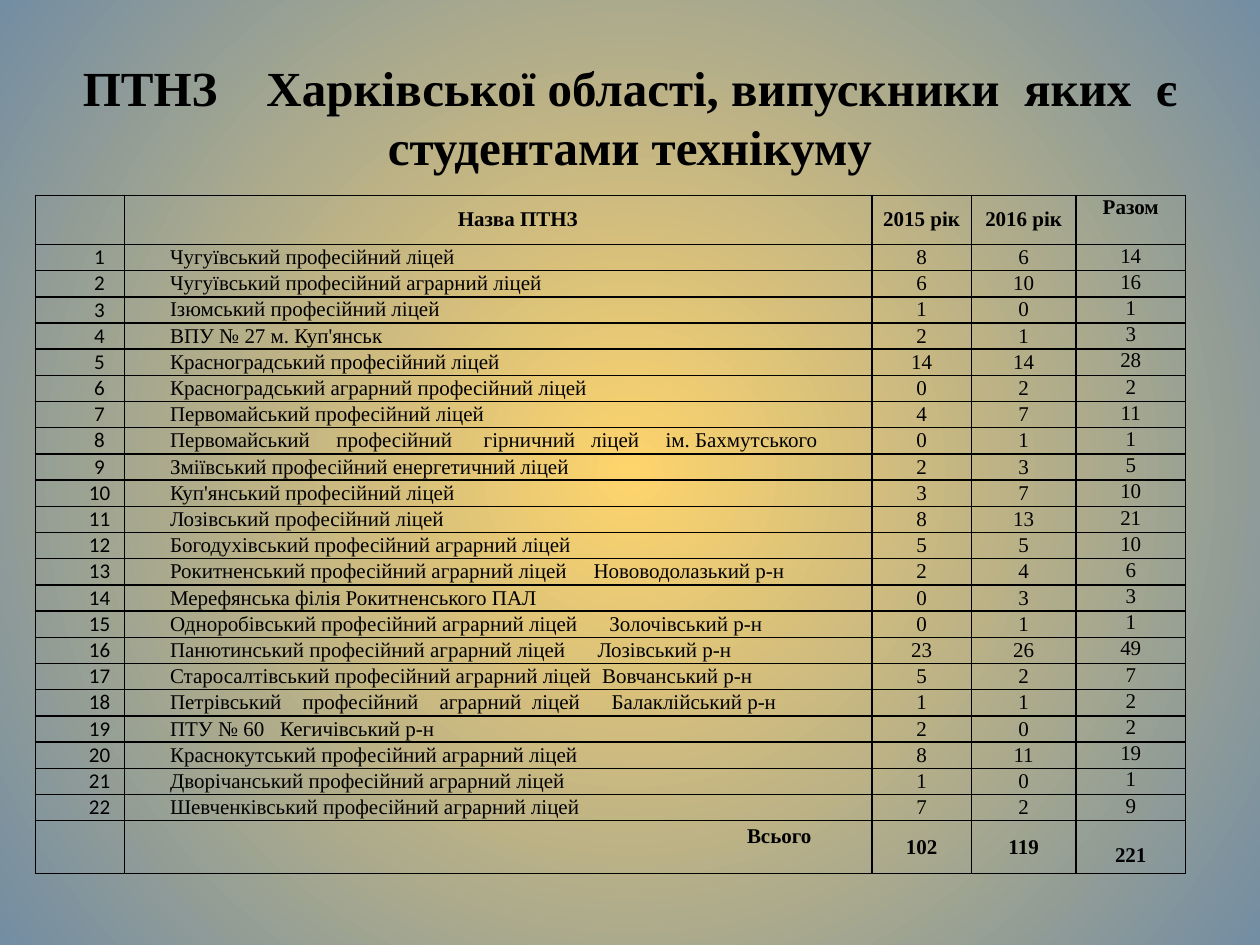
"""Build a slide with a table of vocational schools and their graduates."""
from dataclasses import dataclass, field
from typing import Any

from lxml.etree import SubElement
from pptx import Presentation
from pptx.dml.color import RGBColor
from pptx.enum.text import MSO_ANCHOR, PP_ALIGN
from pptx.oxml import parse_xml
from pptx.oxml.ns import nsdecls, qn
from pptx.util import Inches, Pt

SLIDE_WIDTH, SLIDE_HEIGHT = Inches(10), Inches(7.5)
INK, GLOW, EDGE = "000000", "FED46C", "738DA3"
SERIF, SANS = "Times New Roman", "Calibri"
COLUMN_WIDTHS = (0.71, 5.93, 0.79, 0.83, 0.87)
HEADER_HEIGHT, SCHOOL_HEIGHT, TOTAL_HEIGHT = 0.39, 0.208, 0.42
NAME_INDENT, COUNT_INDENT = Inches(0.31), Inches(-0.03)
SPACE_SHARE = 0.25


@dataclass(frozen=True)
class School:
    """A school; bars in its name mark gaps, given as numbers of space widths."""
    name: str
    year_2015: int
    year_2016: int
    gaps: tuple[int, ...] = ()

    @property
    def total(self) -> int:
        """Return the graduates of both years."""
        return self.year_2015 + self.year_2016


@dataclass(frozen=True)
class Entry:
    """Text with its gaps and its look."""
    text: str
    gaps: tuple[int, ...] = ()
    font: str = SERIF
    size: int = 12
    bold: bool = False
    indent: int = COUNT_INDENT
    align: PP_ALIGN = PP_ALIGN.CENTER
    frame: dict[str, Any] = field(default_factory=dict)


SCHOOLS = (
    School("Чугуївський професійний ліцей", 8, 6),
    School("Чугуївський професійний аграрний ліцей", 6, 10),
    School("Ізюмський професійний ліцей", 1, 0),
    School("ВПУ № 27 м. Куп'янськ", 2, 1),
    School("Красноградський професійний ліцей", 14, 14),
    School("Красноградський аграрний професійний ліцей", 0, 2),
    School("Первомайський професійний ліцей", 4, 7),
    School("Первомайський|професійний|гірничний|ліцей|ім. Бахмутського", 0, 1, (5, 6, 3, 5)),
    School("Зміївський професійний енергетичний ліцей", 2, 3),
    School("Куп'янський професійний ліцей", 3, 7),
    School("Лозівський професійний ліцей", 8, 13),
    School("Богодухівський професійний аграрний ліцей", 5, 5),
    School("Рокитненський професійний аграрний ліцей|Нововодолазький р-н", 2, 4, (5,)),
    School("Мерефянська філія Рокитненського ПАЛ", 0, 3),
    School("Одноробівський професійний аграрний ліцей|Золочівський р-н", 0, 1, (6,)),
    School("Панютинський професійний аграрний ліцей|Лозівський р-н", 23, 26, (6,)),
    School("Старосалтівський професійний аграрний ліцей|Вовчанський р-н", 5, 2, (2,)),
    School("Петрівський|професійний|аграрний|ліцей|Балаклійський р-н", 1, 1, (4, 4, 2, 6)),
    School("ПТУ № 60|Кегичівський р-н", 2, 0, (3,)),
    School("Краснокутський професійний аграрний ліцей", 8, 11),
    School("Дворічанський професійний аграрний ліцей", 1, 0),
    School("Шевченківський професійний аграрний ліцей", 7, 2),
)


def color(value: str) -> RGBColor:
    """Turn a hex string into a colour."""
    return RGBColor.from_string(value)


def apply(target: Any, formats: dict[str, Any]) -> None:
    """Set each format value on the target."""
    for attribute, value in formats.items():
        setattr(target, attribute, value)


def add_words(paragraph: Any, words: str, entry: Entry, tracking: float = 0) -> None:
    """Add a run in the look of the entry, with tracking in points."""
    run = paragraph.add_run()
    run.text = words
    apply(run.font, {"name": entry.font, "size": Pt(entry.size), "bold": entry.bold})
    run.font.color.rgb = color(INK)
    if tracking:
        run.font._element.set("spc", str(round(tracking * 100)))


def write(paragraph: Any, entry: Entry) -> None:
    """Write an entry, widening a single space for each gap."""
    paragraph.alignment = entry.align
    apply_indent = paragraph._p.get_or_add_pPr().set
    apply_indent("marL", "0")
    apply_indent("indent", str(entry.indent))
    parts = entry.text.split("|")
    add_words(paragraph, parts[0], entry)
    for part, gap in zip(parts[1:], entry.gaps, strict=True):
        add_words(paragraph, " ", entry, (gap - 1) * SPACE_SHARE * entry.size)
        add_words(paragraph, part, entry)


def add_borders(cell: Any) -> None:
    """Draw a thin line on all four sides of a cell."""
    properties = cell._tc.get_or_add_tcPr()
    for position, side in enumerate(("lnL", "lnR", "lnT", "lnB")):
        border = parse_xml(f'<a:{side} {nsdecls("a")} w="{Pt(1)}"/>')
        fill = SubElement(border, qn("a:solidFill"))
        SubElement(fill, qn("a:srgbClr"), val=INK)
        properties.insert(position, border)


def fill_cell(cell: Any, entry: Entry) -> None:
    """Format a cell and write its entry."""
    apply(cell, {
        "margin_left": Inches(0.05), "margin_right": Inches(0.05),
        "margin_top": 0, "margin_bottom": 0,
        "vertical_anchor": MSO_ANCHOR.MIDDLE,
    } | entry.frame)
    cell.fill.background()
    add_borders(cell)
    if entry.text:
        write(cell.text_frame.paragraphs[0], entry)


def school_row(number: int, school: School) -> list[Entry]:
    """Return the entries of one school."""
    return [
        Entry(str(number), font=SANS, indent=NAME_INDENT),
        Entry(school.name, school.gaps, indent=NAME_INDENT, align=PP_ALIGN.LEFT),
        Entry(str(school.year_2015)),
        Entry(str(school.year_2016)),
        Entry(str(school.total), frame={"vertical_anchor": MSO_ANCHOR.TOP}),
    ]


def table_rows() -> list[list[Entry]]:
    """Return the header, the schools and the totals."""
    top = {"vertical_anchor": MSO_ANCHOR.TOP}
    header = [
        Entry(""),
        Entry("Назва ПТНЗ", bold=True, indent=NAME_INDENT),
        Entry("2015 рік", bold=True),
        Entry("2016 рік", bold=True),
        Entry("Разом", bold=True, frame=top),
    ]
    totals = [
        Entry(""),
        Entry("Всього", bold=True, indent=0, align=PP_ALIGN.RIGHT,
              frame=top | {"margin_right": Inches(0.48), "margin_top": Inches(0.03)}),
        Entry(str(sum(school.year_2015 for school in SCHOOLS)), bold=True),
        Entry(str(sum(school.year_2016 for school in SCHOOLS)), bold=True),
        Entry(str(sum(school.total for school in SCHOOLS)), bold=True,
              frame=top | {"margin_top": Inches(0.18)}),
    ]
    return [header, *(school_row(*pair) for pair in enumerate(SCHOOLS, 1)), totals]


def add_background(slide: Any) -> None:
    """Fill the slide with a glow from its centre."""
    fill = slide.background.fill
    fill.gradient()
    for stop, position, shade in zip(fill.gradient_stops, (0, 1), (GLOW, EDGE)):
        stop.position = position
        stop.color.rgb = color(shade)
    linear = next(slide._element.iter(qn("a:lin")))
    linear.getparent().replace(linear, parse_xml(
        f'<a:path {nsdecls("a")} path="circle">'
        '<a:fillToRect l="50000" t="50000" r="50000" b="50000"/></a:path>'))


def add_title(slide: Any) -> None:
    """Add the centred heading."""
    heading = slide.shapes.add_textbox(
        round(SLIDE_WIDTH * 0.05), round(SLIDE_HEIGHT * 0.04),
        round(SLIDE_WIDTH * 0.9), Inches(1.25)).text_frame
    apply(heading, {"word_wrap": True, "vertical_anchor": MSO_ANCHOR.MIDDLE})
    write(heading.paragraphs[0], Entry(
        "ПТНЗ|Харківської області, випускники|яких|є студентами технікуму",
        (4, 2, 2), size=28, bold=True, indent=0))


def add_school_table(slide: Any) -> None:
    """Add the table of schools."""
    rows = table_rows()
    heights = (HEADER_HEIGHT, *[SCHOOL_HEIGHT] * len(SCHOOLS), TOTAL_HEIGHT)
    table = slide.shapes.add_table(
        len(rows), len(COLUMN_WIDTHS), Inches(0.28), Inches(1.55),
        Inches(sum(COLUMN_WIDTHS)), Inches(sum(heights))).table
    apply(table, {"first_row": False, "horz_banding": False})
    for column, width in zip(table.columns, COLUMN_WIDTHS):
        column.width = Inches(width)
    for row, height, entries in zip(table.rows, heights, rows):
        row.height = Inches(height)
        for cell, entry in zip(row.cells, entries):
            fill_cell(cell, entry)


def main() -> None:
    """Build and save the slide."""
    deck = Presentation()
    apply(deck, {"slide_width": SLIDE_WIDTH, "slide_height": SLIDE_HEIGHT})
    slide = deck.slides.add_slide(deck.slide_layouts[6])
    for add_part in (add_background, add_title, add_school_table):
        add_part(slide)
    deck.save("out.pptx")


if __name__ == "__main__":
    main()
